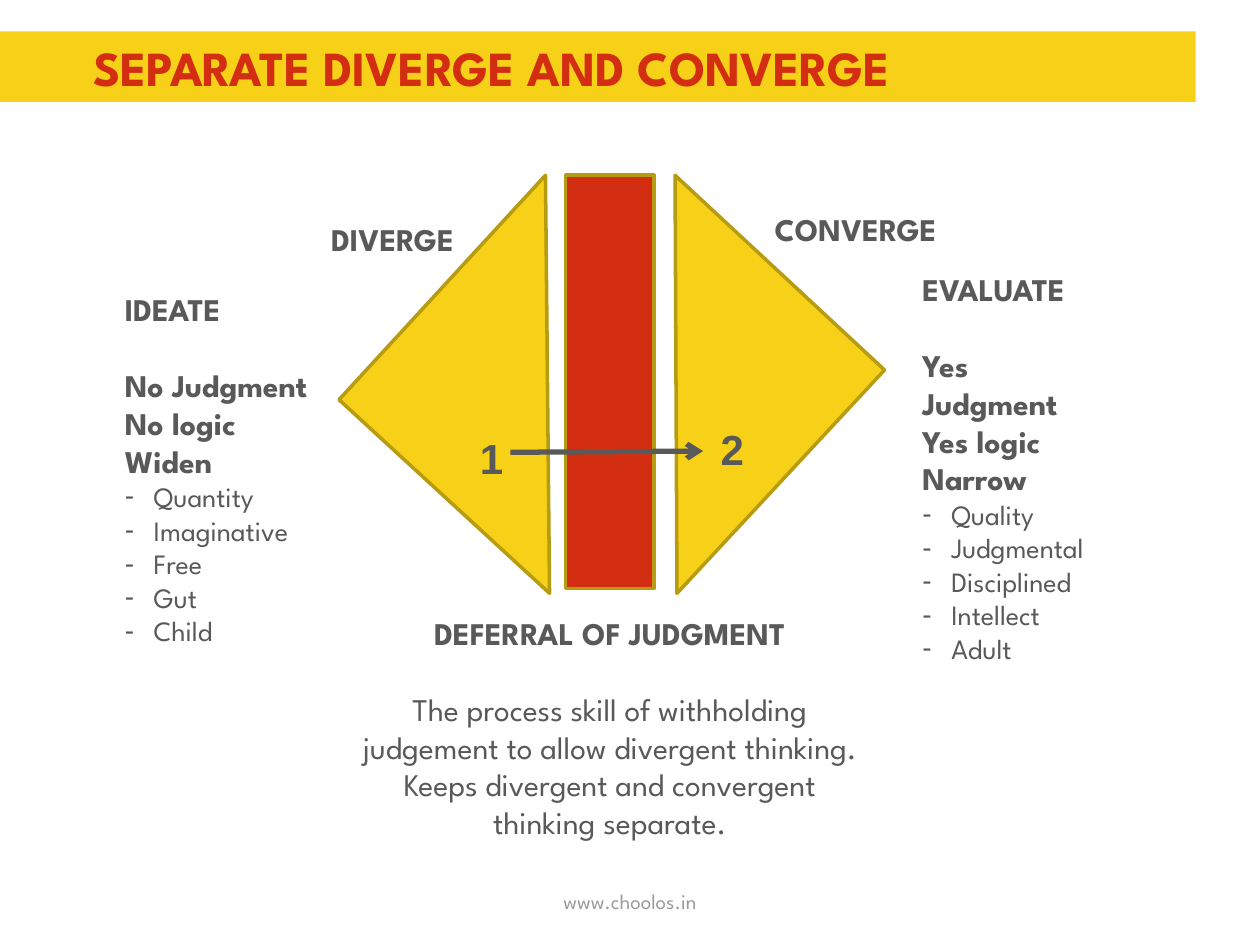
from dataclasses import dataclass

from lxml import etree
from pptx import Presentation
from pptx.dml.color import RGBColor
from pptx.enum.shapes import MSO_CONNECTOR, MSO_SHAPE
from pptx.enum.text import MSO_ANCHOR, MSO_AUTO_SIZE, PP_ALIGN
from pptx.oxml.ns import qn
from pptx.util import Inches, Pt

RECTANGLE, TRIANGLE = MSO_SHAPE.RECTANGLE, MSO_SHAPE.RIGHT_TRIANGLE
STRAIGHT = MSO_CONNECTOR.STRAIGHT
TOP, MIDDLE = MSO_ANCHOR.TOP, MSO_ANCHOR.MIDDLE
LEFT, CENTER = PP_ALIGN.LEFT, PP_ALIGN.CENTER
FIXED = MSO_AUTO_SIZE.NONE
TWO_CONTENT_LAYOUT = 3


@dataclass(frozen=True)
class Theme:
    yellow: RGBColor = RGBColor(0xF7, 0xD1, 0x17)
    red: RGBColor = RGBColor(0xD4, 0x2E, 0x12)
    outline: RGBColor = RGBColor(0xB7, 0x9B, 0x11)
    text: RGBColor = RGBColor(0x59, 0x59, 0x59)
    footer: RGBColor = RGBColor(0x9B, 0x9B, 0x9B)
    font: str = "League Spartan"
    number_font: str = "Arial"
    title_size: int = 28
    number_size: int = 24
    heading_size: int = 18
    item_size: int = 16
    footer_size: int = 12
    heading_gap: int = 22


THEME = Theme()


def place(shape, box):
    shape.left, shape.top, shape.width, shape.height = map(Inches, box)


def set_margins(frame, horizontal, vertical):
    frame.margin_left = frame.margin_right = Inches(horizontal)
    frame.margin_top = frame.margin_bottom = Inches(vertical)


def format_paragraph(paragraph, size=THEME.heading_size, bold=True,
                     color=THEME.text, font=THEME.font, align=LEFT):
    paragraph.alignment = align
    for run in paragraph.runs:
        run.font.name = font
        run.font.size = Pt(size)
        run.font.bold = bold
        run.font.color.rgb = color


def add_text(slide, box, text, **style):
    text_box = slide.shapes.add_textbox(*map(Inches, box))
    frame = text_box.text_frame
    frame.word_wrap = True
    frame.text = text
    for paragraph in frame.paragraphs:
        format_paragraph(paragraph, **style)
    return frame


def add_block(slide, kind, box, fill, outlined=True):
    shape = slide.shapes.add_shape(kind, *map(Inches, box))
    shape.shadow.inherit = False
    shape.fill.solid()
    shape.fill.fore_color.rgb = fill
    if outlined:
        shape.line.color.rgb = THEME.outline
        shape.line.width = Pt(2)
    else:
        shape.line.fill.background()
    return shape


def set_bullet(paragraph, dash):
    """Give the paragraph a hanging dash, or clear the inherited bullet."""
    properties = paragraph._p.get_or_add_pPr()
    indent = Inches(0.23) if dash else 0
    properties.set("marL", str(indent))
    properties.set("indent", str(-indent))
    if dash:
        etree.SubElement(properties, qn("a:buFont")).set("typeface", THEME.number_font)
        etree.SubElement(properties, qn("a:buChar")).set("char", "-")
    else:
        etree.SubElement(properties, qn("a:buNone"))


def build_title(slide, box, text):
    band = add_block(slide, RECTANGLE, box, THEME.yellow, outlined=False)
    slide.shapes._spTree.insert(2, band._element)
    left, top, width, _ = box
    title = slide.shapes.title
    place(title, (left + 0.74, top + 0.05, width - 1.01, 1.25))
    frame = title.text_frame
    frame.text = text
    frame.vertical_anchor = TOP
    frame.auto_size = FIXED
    set_margins(frame, 0, 0)
    format_paragraph(frame.paragraphs[0], THEME.title_size, color=THEME.red)


def build_list(placeholder, box, heading, statements, items):
    place(placeholder, box)
    frame = placeholder.text_frame
    frame.text = "\n".join([heading, *statements, *items])
    frame.vertical_anchor = TOP
    frame.auto_size = FIXED
    set_margins(frame, 0.1, 0.05)
    for index, paragraph in enumerate(frame.paragraphs):
        is_item = index > len(statements)
        paragraph.space_before = Pt(0)
        paragraph.space_after = Pt(0 if index else THEME.heading_gap)
        set_bullet(paragraph, is_item)
        size = THEME.item_size if is_item else THEME.heading_size
        format_paragraph(paragraph, size, bold=not is_item)


def build_number(slide, left, top, text):
    frame = add_text(slide, (left, top, 1, 1), text,
                     size=THEME.number_size, font=THEME.number_font)
    set_margins(frame, 0, 0)
    frame.paragraphs[0].line_spacing = 1.13


def build_arrow(slide, start, end):
    arrow = slide.shapes.add_connector(STRAIGHT, *map(Inches, (*start, *end)))
    arrow.line.color.rgb = THEME.text
    arrow.line.width = Pt(3)
    etree.SubElement(arrow.line._get_or_add_ln(), qn("a:tailEnd")).set("type", "arrow")
    etree.SubElement(arrow._element.spPr, qn("a:effectLst"))


def build_diamond(slide, box):
    """Draw two triangles parted by a bar, with an arrow from 1 to 2."""
    left, top, width, height = box
    side_width, side_height = 2.27, 2.42
    side_top = top + 0.45
    bar_width = 0.7
    for side_left, rotation in ((left + 0.52, 42.6), (left + 1.54, 222.9)):
        triangle = add_block(slide, TRIANGLE,
                             (side_left, side_top, side_width, side_height), THEME.yellow)
        triangle.rotation = rotation
    add_block(slide, RECTANGLE, (left + 1.8, top, bar_width, height), THEME.red)
    add_text(slide, (left - 0.16, top + 0.31, 1.34, 0.4), "DIVERGE")
    add_text(slide, (left + 3.36, top + 0.23, 1.65, 0.4), "CONVERGE")
    build_number(slide, left + 1.12, top + 1.99, "1")
    build_number(slide, left + 3.03, top + 1.92, "2")
    build_arrow(slide, (left + 1.36, top + 2.2), (left + width - 1.44, top + 2.19))


def build_deferral(slide, box):
    frame = add_text(
        slide, box,
        "DEFERRAL OF JUDGMENT\n"
        "The process skill of withholding judgement to allow divergent thinking.\n"
        "Keeps divergent and convergent thinking separate.",
        bold=False, align=CENTER)
    heading = frame.paragraphs[0]
    heading.space_after = Pt(THEME.heading_gap)
    heading.runs[0].font.bold = True


def build_footer(slide, box, text):
    frame = add_text(slide, box, text, size=THEME.footer_size, bold=False,
                     color=THEME.footer, align=CENTER)
    frame.vertical_anchor = MIDDLE


def main():
    presentation = Presentation()
    presentation.slide_width = Inches(10)
    presentation.slide_height = Inches(7.5)
    slide = presentation.slides.add_slide(presentation.slide_layouts[TWO_CONTENT_LAYOUT])
    _, ideate, evaluate = slide.placeholders

    build_title(slide, (0, 0.25, 9.49, 0.56), "SEPARATE DIVERGE AND CONVERGE")
    build_diamond(slide, (2.69, 1.39, 4.33, 3.28))
    build_list(ideate, (0.89, 2.25, 1.66, 2.96), "IDEATE",
               ["No Judgment", "No logic", "Widen"],
               ["Quantity", "Imaginative", "Free", "Gut", "Child"])
    build_list(evaluate, (7.22, 2.09, 1.68, 2.99), "EVALUATE",
               ["Yes Judgment", "Yes logic", "Narrow"],
               ["Quality", "Judgmental", "Disciplined", "Intellect", "Adult"])
    build_deferral(slide, (2.77, 4.82, 4.14, 2.22))
    build_footer(slide, (3.31, 6.95, 3.38, 0.4), "www.choolos.in")
    presentation.save("out.pptx")


if __name__ == "__main__":
    main()
